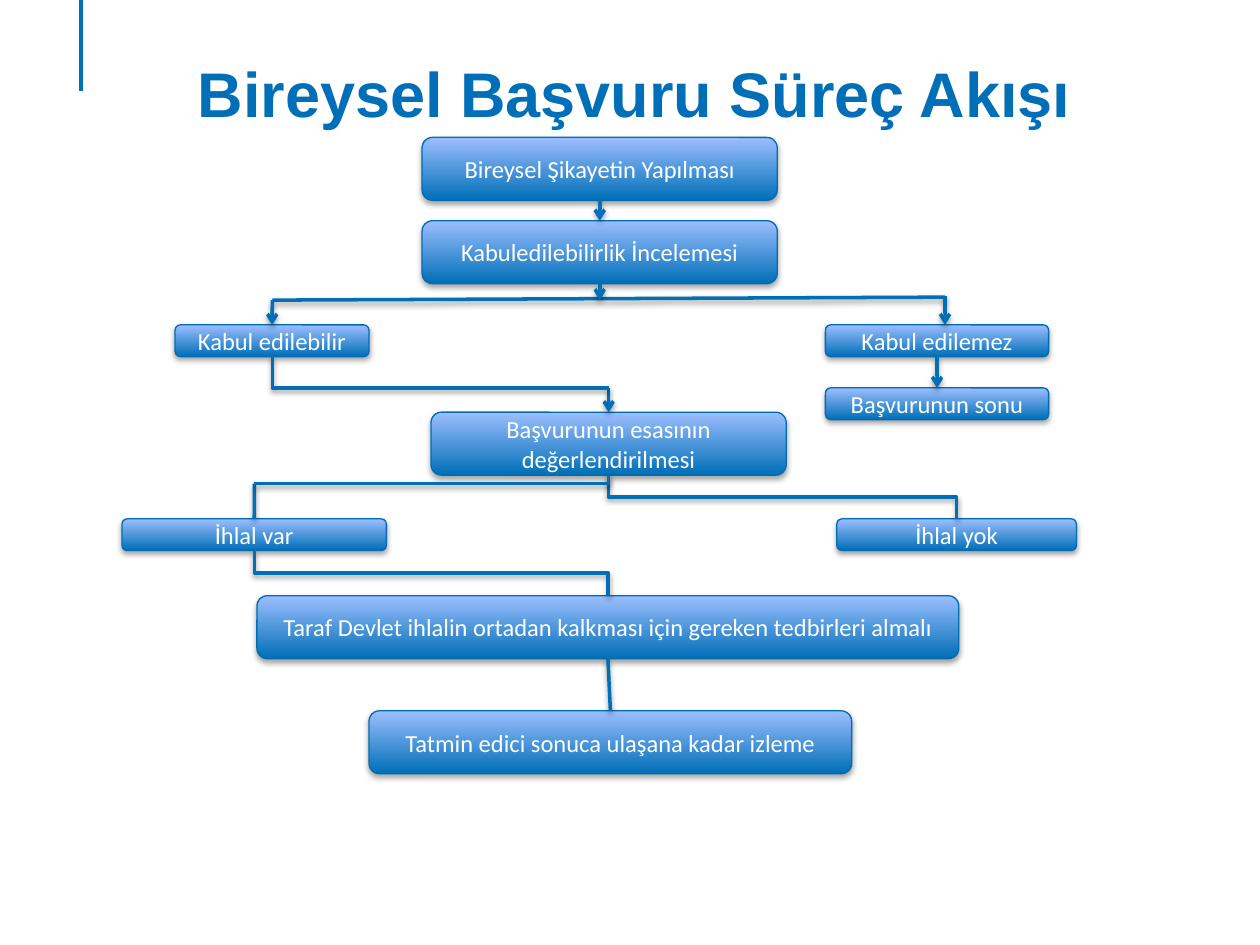
"""Build the individual application process flowchart slide."""
from dataclasses import dataclass
from typing import Optional

from lxml.etree import SubElement
from pptx import Presentation
from pptx.dml.color import RGBColor
from pptx.enum.shapes import MSO_CONNECTOR, MSO_SHAPE
from pptx.enum.text import MSO_ANCHOR, MSO_AUTO_SIZE, PP_ALIGN
from pptx.oxml.ns import qn
from pptx.util import Cm, Pt

BLUE = "006FB7"
LIGHT_BLUE = "9CBEFF"
OUTLINE = "006DB3"
WHITE = "FFFFFF"
TOP, BOTTOM = 0, 2
Point = tuple[float, float]


@dataclass
class Box:
    text: str
    left: float
    top: float
    width: float
    height: float


@dataclass
class Line:
    start: Point
    end: Point
    arrow: bool = False
    start_box: Optional[str] = None
    end_box: Optional[str] = None


@dataclass
class Elbow:
    start: Point
    end: Point
    preset: str


TALL, SHORT = 1.27, 0.64
BOXES = {
    "complaint": Box("Bireysel Şikayetin Yapılması", 8.51, 2.77, 7.16, TALL),
    "review": Box("Kabuledilebilirlik İncelemesi", 8.51, 4.45, 7.16, TALL),
    "admissible": Box("Kabul edilebilir", 3.53, 6.55, 3.91, SHORT),
    "merits": Box("Başvurunun esasının değerlendirilmesi", 8.69, 8.31, 7.16, TALL),
    "violation": Box("İhlal var", 2.46, 10.46, 5.33, SHORT),
    "inadmissible": Box("Kabul edilemez", 16.64, 6.55, 4.5, SHORT),
    "closed": Box("Başvurunun sonu", 16.64, 7.82, 4.5, SHORT),
    "monitoring": Box("Tatmin edici sonuca ulaşana kadar izleme", 7.44, 14.33, 9.73, TALL),
    "measures": Box("Taraf Devlet ihlalin ortadan kalkması için gereken tedbirleri almalı",
                    5.18, 12.01, 14.15, TALL),
    "no_violation": Box("İhlal yok", 16.87, 10.46, 4.83, SHORT),
}
LINES = [
    Line((5.49, 6.05), (19.05, 5.99)),
    Line((19.05, 5.97), (19.05, 6.55), True),
    Line((5.49, 6.05), (5.49, 6.55), True, None, "admissible"),
    Line((12.09, 5.72), (12.09, 6.05), True, "review"),
    Line((12.09, 4.04), (12.09, 4.45), True, "complaint", "review"),
    Line((18.89, 7.19), (18.89, 7.82), True, "inadmissible", "closed"),
    Line((12.27, 7.82), (12.27, 8.31), True, None, "merits"),
    Line((5.13, 9.75), (5.13, 10.46), False, None, "violation"),
    Line((12.26, 13.28), (12.3, 14.33), False, "measures", "monitoring"),
]
ELBOWS = [
    Elbow((5.49, 7.19), (12.27, 7.82), "bentConnector2"),
    Elbow((12.27, 9.58), (19.28, 10.46), "bentConnector3"),
    Elbow((12.27, 9.58), (5.13, 9.75), "bentConnector2"),
    Elbow((5.13, 11.1), (12.26, 12.01), "bentConnector3"),
]


def color(value: str) -> RGBColor:
    return RGBColor.from_string(value)


def add_shadow(shape, opacity: int, distance: float) -> None:
    effects = SubElement(shape.element.spPr, qn("a:effectLst"))
    shadow = SubElement(effects, qn("a:outerShdw"), blurRad=str(Pt(3.1)),
                        dist=str(Pt(distance)), dir="5400000", rotWithShape="0")
    black = SubElement(shadow, qn("a:srgbClr"), val="000000")
    SubElement(black, qn("a:alpha"), val=str(opacity * 1000))


def add_box(slide, box: Box):
    shape = slide.shapes.add_shape(MSO_SHAPE.ROUNDED_RECTANGLE, Cm(box.left), Cm(box.top),
                                   Cm(box.width), Cm(box.height))
    shape.fill.gradient()
    shape.fill.gradient_angle = 90
    for stop, position, shade in zip(shape.fill.gradient_stops, (0, 1), (BLUE, LIGHT_BLUE)):
        stop.position = position
        stop.color.rgb = color(shade)
    shape.line.color.rgb = color(OUTLINE)
    shape.line.width = Pt(0.75)
    add_shadow(shape, 35, 1.8)
    frame = shape.text_frame
    frame.word_wrap = True
    frame.vertical_anchor = MSO_ANCHOR.MIDDLE
    frame.text = box.text
    paragraph = frame.paragraphs[0]
    paragraph.alignment = PP_ALIGN.CENTER
    paragraph.font.name = "Calibri"
    paragraph.font.size = Pt(14)
    paragraph.font.color.rgb = color(WHITE)
    return shape


def add_connector(slide, kind, start: Point, end: Point):
    connector = slide.shapes.add_connector(kind, *map(Cm, start + end))
    connector.line.color.rgb = color(BLUE)
    connector.line.width = Pt(2)
    return connector


def add_line(slide, line: Line, shapes: dict) -> None:
    connector = add_connector(slide, MSO_CONNECTOR.STRAIGHT, line.start, line.end)
    if line.start_box:
        connector.begin_connect(shapes[line.start_box], BOTTOM)
    if line.end_box:
        connector.end_connect(shapes[line.end_box], TOP)
    if line.arrow:
        SubElement(connector.element.spPr.find(qn("a:ln")), qn("a:tailEnd"), type="arrow")
    add_shadow(connector, 38, 1.6)


def add_elbow(slide, elbow: Elbow) -> None:
    """Draw an elbow that leaves its start downwards, as a turned preset."""
    connector = add_connector(slide, MSO_CONNECTOR.ELBOW, elbow.start, elbow.end)
    (start_x, start_y), (end_x, end_y) = elbow.start, elbow.end
    across, down = abs(end_x - start_x), end_y - start_y
    connector.left = Cm((start_x + end_x - down) / 2)
    connector.top = Cm((start_y + end_y - across) / 2)
    connector.width, connector.height = Cm(down), Cm(across)
    properties = connector.element.spPr
    transform = properties.find(qn("a:xfrm"))
    goes_right = end_x > start_x
    transform.set("rot", "16200000" if goes_right else "5400000")
    transform.set("flipH", "1" if goes_right else "0")
    properties.find(qn("a:prstGeom")).set("prst", elbow.preset)
    add_shadow(connector, 38, 1.6)


def add_title(slide, text: str) -> None:
    title = slide.shapes.title
    title.left, title.top, title.width, title.height = Cm(0.74), Cm(0.97), Cm(24.1), Cm(1.8)
    frame = title.text_frame
    frame.text = text
    frame.auto_size = MSO_AUTO_SIZE.NONE
    paragraph = frame.paragraphs[0]
    paragraph.alignment = PP_ALIGN.CENTER
    paragraph.font.name = "Arial"
    paragraph.font.size = Pt(36)
    paragraph.font.bold = True
    paragraph.font.color.rgb = color(BLUE)


def main() -> None:
    presentation = Presentation()
    presentation.slide_width, presentation.slide_height = Cm(25.4), Cm(19.05)
    slide = presentation.slides.add_slide(presentation.slide_layouts[5])
    accent = add_connector(slide, MSO_CONNECTOR.STRAIGHT, (1.63, 0), (1.63, 1.83))
    SubElement(accent.element.spPr, qn("a:effectLst"))
    add_title(slide, "Bireysel Başvuru Süreç Akışı")
    shapes = {name: add_box(slide, box) for name, box in BOXES.items()}
    for line in LINES:
        add_line(slide, line, shapes)
    for elbow in ELBOWS:
        add_elbow(slide, elbow)
    presentation.save("out.pptx")


if __name__ == "__main__":
    main()
